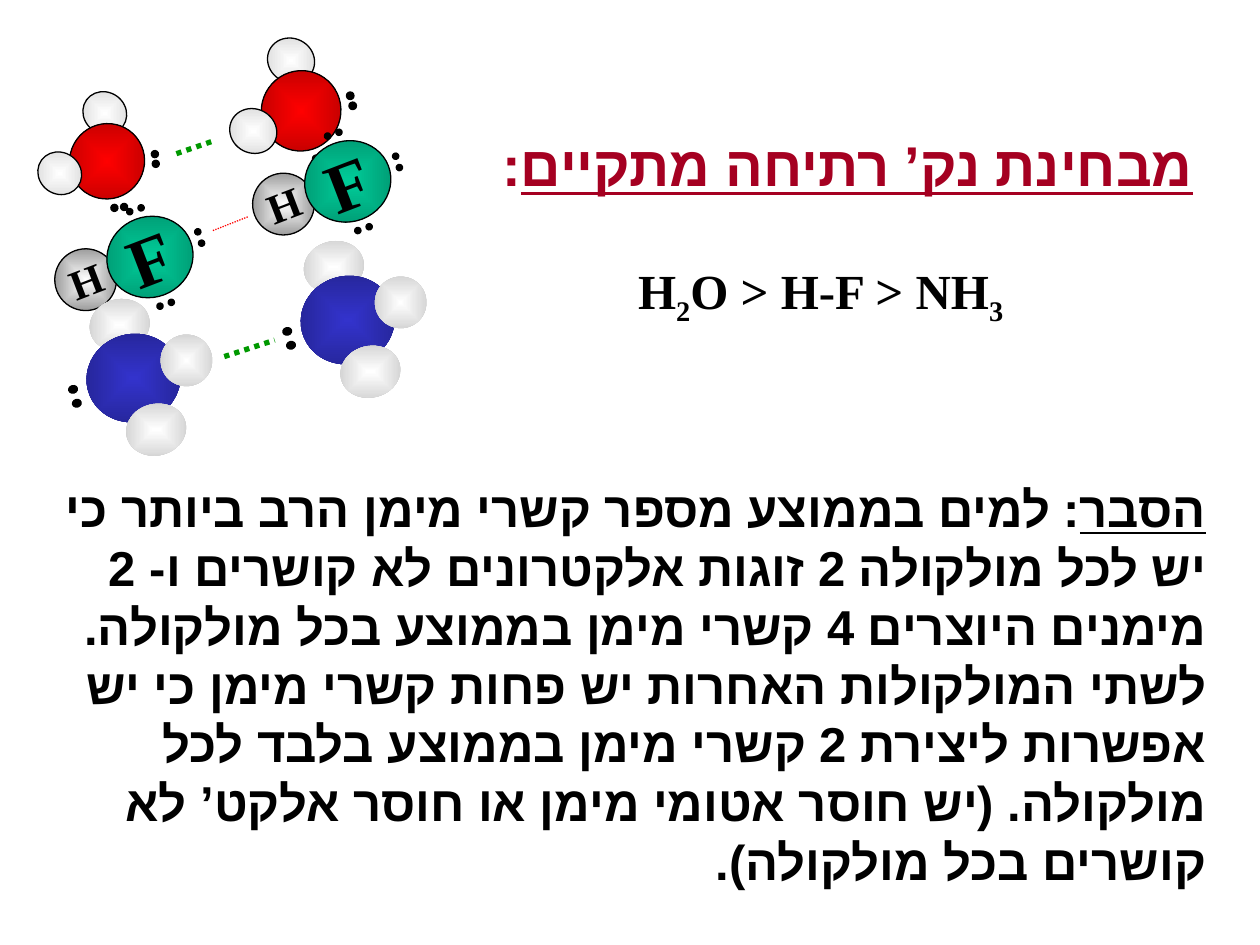
import math
from collections import namedtuple
from dataclasses import dataclass

from lxml import etree
from pptx import Presentation, util as u
from pptx.dml.color import RGBColor
from pptx.enum import dml, shapes, text
from pptx.oxml.ns import qn

Box = namedtuple("Box", "left top width height")
Atom = namedtuple("Atom", "x y width height gradient outlined symbol size", defaults=(True, "", 0))
Molecule = namedtuple("Molecule", "atoms electrons dot_width dot_height")


@dataclass(frozen=True)
class Theme:
    font: str = "Times New Roman"
    hebrew_font: str = "Arial"
    ink: str = "000000"
    heading: str = "A50021"
    green_bond: str = "009900"
    red_bond: str = "FF0000"
    oxygen: tuple = ("FF0000", "B60000")
    fluorine: tuple = ("00CC99", "00926D")
    nitrogen: tuple = ("3333CC", "242492")
    water_hydrogen: tuple = ("FFFFFF", "D6D6D6")
    fluoride_hydrogen: tuple = ("FFFFFF", "808080")
    ammonia_hydrogen: tuple = ("FFFFFF", "CDCDCD")
    heading_size: int = 32
    body_size: int = 28
    fluorine_size: int = 40
    hydrogen_size: int = 24
    outline: float = 0.75
    thick_bond: float = 3


THEME = Theme()

WATER = Molecule(
    [Atom(-0.08, -0.4, 0.35, 0.38, THEME.water_hydrogen),
     Atom(0, 0, 0.64, 0.63, THEME.oxygen),
     Atom(-0.38, 0.16, 0.35, 0.38, THEME.water_hydrogen)],
    [(0.12, 0.38), (0.2, 0.36), (0.41, -0.04), (0.39, -0.12)], 0.06, 0.06)

FLUORIDE = Molecule(
    [Atom(-0.51, 0.18, 0.49, 0.49, THEME.fluoride_hydrogen, True, "H", THEME.hydrogen_size),
     Atom(0, 0, 0.69, 0.64, THEME.fluorine, True, "F", THEME.fluorine_size)],
    [(-0.16, -0.36), (-0.07, -0.39), (0.38, -0.2), (0.41, -0.11), (0.17, 0.36), (0.08, 0.39)],
    0.05, 0.05)

AMMONIA = Molecule(
    [Atom(-0.11, -0.42, 0.41, 0.48, THEME.ammonia_hydrogen, False),
     Atom(0, 0, 0.7, 0.75, THEME.nitrogen, False),
     Atom(0.42, -0.14, 0.41, 0.41, THEME.ammonia_hydrogen, False),
     Atom(0.18, 0.41, 0.41, 0.48, THEME.ammonia_hydrogen, False)],
    [(-0.45, 0.2), (-0.48, 0.09)], 0.06, 0.07)


def color(value):
    return RGBColor.from_string(value)


def style_run(run, size, ink):
    run.font.size = u.Pt(size)
    run.font.name = THEME.font
    run.font.bold = True
    run.font.color.rgb = color(ink)
    etree.SubElement(run.font._element, qn("a:cs"), typeface=THEME.hebrew_font)


def set_rtl(paragraph):
    paragraph._p.get_or_add_pPr().set("rtl", "1")


def fill_radial(fill, gradient):
    fill.gradient()
    for stop, value in zip(fill.gradient_stops, gradient):
        stop.color.rgb = color(value)
    grad = fill._xPr.find(qn("a:gradFill"))
    linear = grad.find(qn("a:lin"))
    radial = etree.Element(qn("a:path"), {"path": "shape"})
    etree.SubElement(radial, qn("a:fillToRect"), dict.fromkeys("ltrb", "50000"))
    grad.replace(linear, radial)


def add_ball(slide, x, y, width, height, angle, outlined=True):
    ball = slide.shapes.add_shape(
        shapes.MSO_SHAPE.OVAL, u.Inches(x - width / 2), u.Inches(y - height / 2),
        u.Inches(width), u.Inches(height))
    ball.rotation = angle
    ball.shadow.inherit = False
    if outlined:
        ball.line.color.rgb = color(THEME.ink)
        ball.line.width = u.Pt(THEME.outline)
    else:
        ball.line.fill.background()
    return ball


def label_atom(ball, symbol, size):
    frame = ball.text_frame
    frame.word_wrap = False
    frame.vertical_anchor = text.MSO_ANCHOR.MIDDLE
    paragraph = frame.paragraphs[0]
    paragraph.text = symbol
    paragraph.alignment = text.PP_ALIGN.CENTER
    set_rtl(paragraph)
    style_run(paragraph.runs[0], size, THEME.ink)


def add_molecule(slide, molecule, center, angle, turn=0, scale=1):
    cos, sin = math.cos(math.radians(turn)), math.sin(math.radians(turn))

    def place(x, y):
        return center[0] + scale * (x * cos - y * sin), center[1] + scale * (x * sin + y * cos)

    for atom in molecule.atoms:
        ball = add_ball(slide, *place(atom.x, atom.y), atom.width * scale,
                        atom.height * scale, angle + turn, atom.outlined)
        fill_radial(ball.fill, atom.gradient)
        if atom.symbol:
            label_atom(ball, atom.symbol, atom.size)
    for x, y in molecule.electrons:
        electron = add_ball(slide, *place(x, y), molecule.dot_width * scale,
                            molecule.dot_height * scale, angle + turn)
        electron.fill.solid()
        electron.fill.fore_color.rgb = color(THEME.ink)


def add_bond(slide, start, end, ink, width):
    bond = slide.shapes.add_connector(
        shapes.MSO_CONNECTOR.STRAIGHT, *(u.Inches(value) for value in (*start, *end)))
    bond.line.color.rgb = color(ink)
    bond.line.width = u.Pt(width)
    bond.line.dash_style = dml.MSO_LINE.ROUND_DOT
    etree.SubElement(bond._element.spPr, qn("a:effectLst"))


def add_water_pair(slide, box):
    x, y = box.left, box.top
    add_molecule(slide, WATER, (x + 2.07, y + 0.58), 297.3)
    add_molecule(slide, WATER, (x + 0.53, y + 0.98), 297.3, turn=8.6, scale=0.94)
    add_bond(slide, (x + 1.08, y + 0.92), (x + 1.37, y + 0.82), THEME.green_bond, THEME.thick_bond)


def add_fluoride_pair(slide, box):
    x, y = box.left, box.top
    add_molecule(slide, FLUORIDE, (x + 0.76, y + 1.02), 339)
    add_molecule(slide, FLUORIDE, (x + 2.33, y + 0.42), 339)
    add_bond(slide, (x + 1.26, y + 0.81), (x + 1.54, y + 0.7), THEME.red_bond, THEME.outline)


def add_ammonia_pair(slide, box):
    x, y = box.left, box.top
    add_molecule(slide, AMMONIA, (x + 2.2, y + 0.66), 255.4)
    add_molecule(slide, AMMONIA, (x + 0.5, y + 1.12), 255.7)
    add_bond(slide, (x + 1.22, y + 0.95), (x + 1.62, y + 0.82), THEME.green_bond, THEME.thick_bond)


def add_statement(slide, box, parts, size, ink, rtl=True):
    statement = slide.shapes.add_textbox(*(u.Inches(value) for value in box))
    frame = statement.text_frame
    frame.word_wrap = True
    frame.auto_size = text.MSO_AUTO_SIZE.SHAPE_TO_FIT_TEXT
    paragraph = frame.paragraphs[0]
    paragraph.alignment = text.PP_ALIGN.RIGHT
    if rtl:
        set_rtl(paragraph)
    for words, mark in parts:
        run = paragraph.add_run()
        run.text = words
        style_run(run, size, ink)
        if mark == "underline":
            run.font.underline = True
        elif mark == "subscript":
            run.font._element.set("baseline", "-25000")


def main():
    deck = Presentation()
    deck.slide_width, deck.slide_height = u.Inches(10), u.Inches(7.5)
    slide = deck.slides.add_slide(deck.slide_layouts[6])
    add_statement(slide, Box(3.35, 0.99, 6.22, 0.63),
                  [("מבחינת נק’ רתיחה מתקיים", "underline"), (":", "")],
                  THEME.heading_size, THEME.heading)
    add_statement(slide, Box(3.98, 2.02, 4.08, 0.57),
                  [("H", ""), ("2", "subscript"), ("O > H-F > NH", ""), ("3", "subscript")],
                  THEME.body_size, THEME.ink, rtl=False)
    explanation = (
        ": למים בממוצע מספר קשרי מימן הרב ביותר כי יש לכל מולקולה 2 זוגות אלקטרונים "
        "לא קושרים ו- 2 מימנים היוצרים 4 קשרי מימן בממוצע בכל מולקולה. לשתי המולקולות "
        "האחרות יש פחות קשרי מימן כי יש אפשרות ליצירת 2 קשרי מימן בממוצע בלבד לכל "
        "מולקולה. (יש חוסר אטומי מימן או חוסר אלקט’ לא קושרים בכל מולקולה).")
    add_statement(slide, Box(0, 3.75, 9.67, 2.9),
                  [("הסבר", "underline"), (explanation, "")], THEME.body_size, THEME.ink)
    add_water_pair(slide, Box(0.32, 0.3, 2.51, 1.38))
    add_fluoride_pair(slide, Box(0.43, 1.02, 2.76, 1.44))
    add_ammonia_pair(slide, Box(0.56, 1.88, 2.82, 1.77))
    deck.save("out.pptx")


if __name__ == "__main__":
    main()
